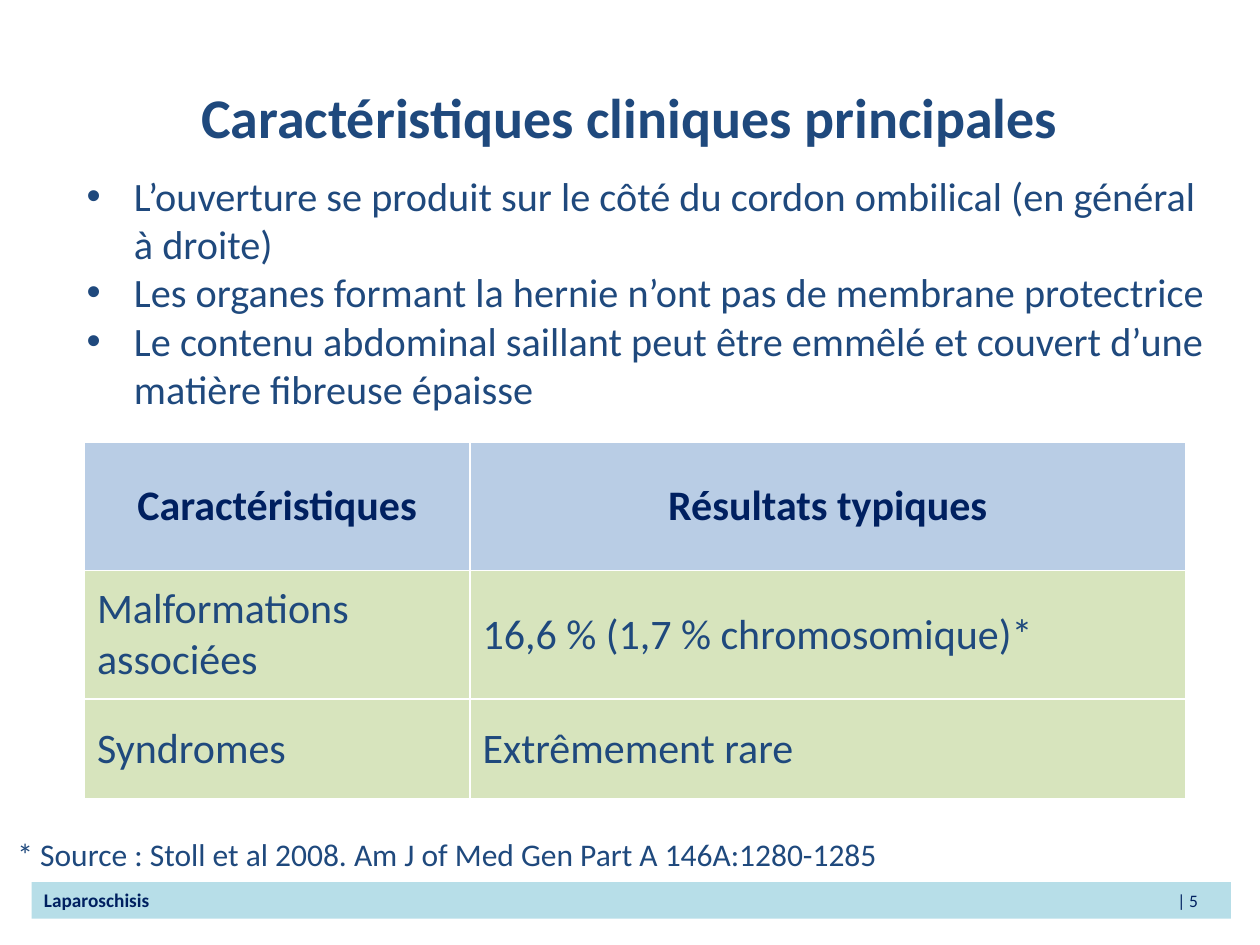
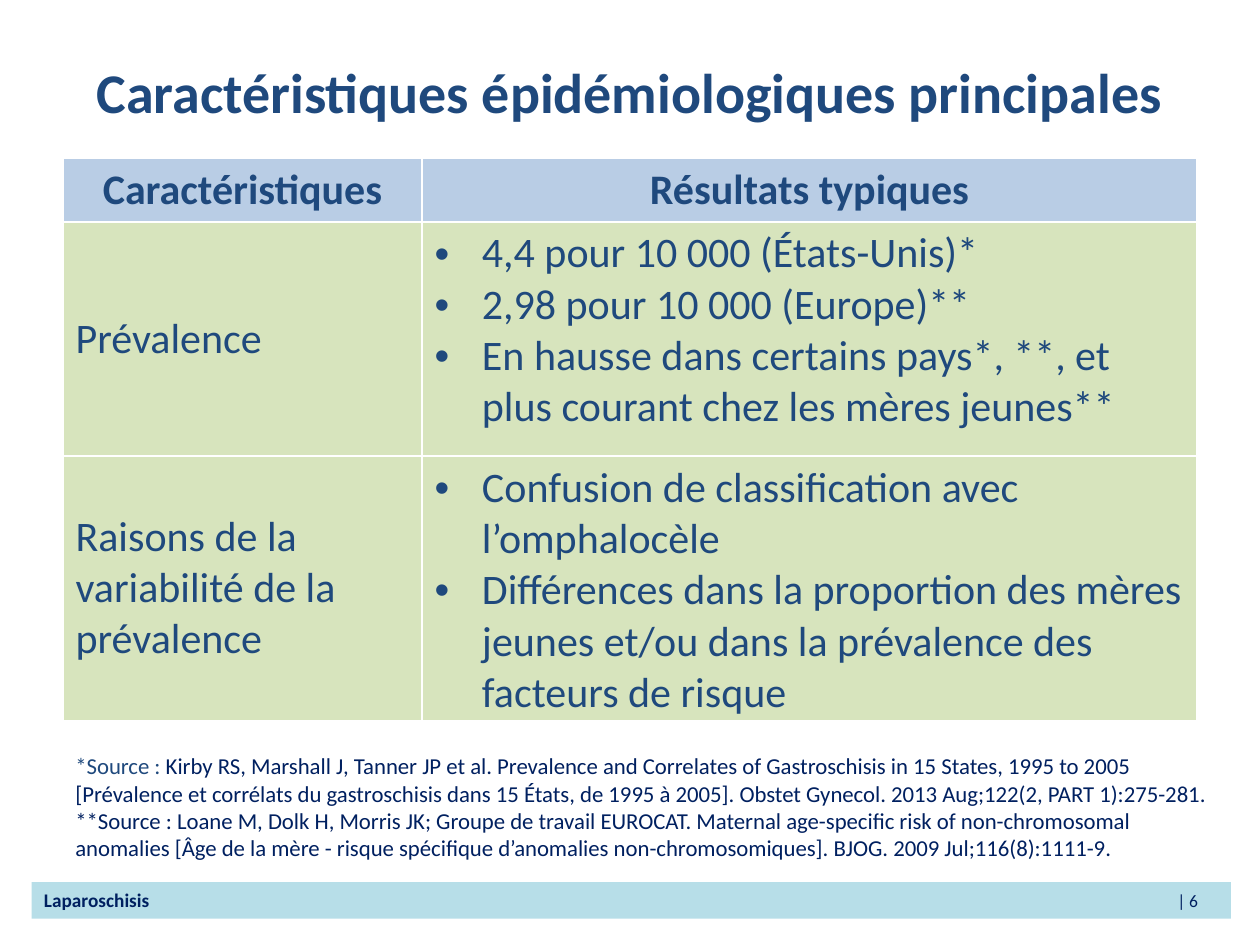
from lxml.etree import SubElement as Sub
from pptx import Presentation
from pptx.dml.color import RGBColor
from pptx.enum.shapes import MSO_SHAPE as Shape
from pptx.enum.text import MSO_ANCHOR as Anchor, PP_ALIGN as Align
from pptx.oxml.ns import qn
from pptx.util import Inches, Pt

BLUE = RGBColor(0x1F, 0x49, 0x7D)
NAVY = RGBColor(0x00, 0x20, 0x60)
AQUA = RGBColor(0xB7, 0xDE, 0xE8)
SKY = RGBColor(0xB9, 0xCD, 0xE5)
LIME = RGBColor(0xD7, 0xE4, 0xBD)
FONT = "Calibri"
COLS, ROWS = 100, 75
HANG = 3.75


class Deck:
    """Slides on a grid of COLS by ROWS; all lengths are in its cells."""

    def __init__(self):
        self.prs = Presentation()
        self.prs.slide_width, self.prs.slide_height = Inches(10), Inches(7.5)
        self.slide = None

    def x(self, cols):
        return round(self.prs.slide_width * cols / COLS)

    def y(self, rows):
        return round(self.prs.slide_height * rows / ROWS)

    def box(self, left, top, width, height):
        return self.x(left), self.y(top), self.x(width), self.y(height)

    def page(self, title, top, num):
        self.slide = self.prs.slides.add_slide(self.prs.slide_layouts[6])
        self.band("Laparoschisis", f"| {num}")
        self.text((5, top, 90, 12.5), [title], 32, bold=True,
                  align=Align.CENTER, anchor=Anchor.MIDDLE)

    def band(self, name, num):
        bar = self.slide.shapes.add_shape(Shape.RECTANGLE, *self.box(2.5, 70, 95.2, 2.9))
        bar.shadow.inherit = False
        bar.fill.solid()
        bar.fill.fore_color.rgb = AQUA
        bar.line.fill.background()
        self.put(bar.text_frame, [[(name + "\t", NAVY), (num, NAVY)]], 11)
        para = bar.text_frame.paragraphs[0]
        para.runs[0].font.bold = True
        para.runs[1].font.size = Pt(10)
        props = para._p.get_or_add_pPr()
        tabs = Sub(props, qn("a:tabLst"))
        Sub(tabs, qn("a:tab"), pos=str(self.x(91.6)), algn="r")
        # the schema wants the tab list ahead of the default run style
        props.insert(0, tabs)

    def text(self, place, paras, size, anchor=Anchor.TOP, **style):
        frame = self.slide.shapes.add_textbox(*self.box(*place)).text_frame
        frame.vertical_anchor = anchor
        self.put(frame, paras, size, **style)

    def put(self, frame, paras, size, color=BLUE, bold=False,
            align=Align.LEFT, dots=False):
        """Fill a frame; a paragraph is a string or a list of (text, colour)."""
        frame.word_wrap = True
        for i, item in enumerate(paras):
            para = frame.add_paragraph() if i else frame.paragraphs[0]
            para.alignment = align
            if dots:
                self.dot(para)
            font = para.font
            font.name, font.size, font.bold = FONT, Pt(size), bold
            font.color.rgb = color
            for words, tint in [(item, None)] if isinstance(item, str) else item:
                run = para.add_run()
                run.text = words
                if tint is not None:
                    run.font.color.rgb = tint

    def dot(self, para):
        props = para._p.get_or_add_pPr()
        props.set("marL", str(self.x(HANG)))
        props.set("indent", str(-self.x(HANG)))
        Sub(props, qn("a:buFont"), typeface="Arial")
        Sub(props, qn("a:buChar"), char="•")

    def table(self, place, cols, rows, cells, head):
        """Draw a table; a cell given as a list becomes a bullet list."""
        grid = self.slide.shapes.add_table(len(rows), len(cols), *self.box(*place)).table
        for col, width in zip(grid.columns, cols):
            col.width = self.x(width)
        for r, (row, height) in enumerate(zip(cells, rows)):
            grid.rows[r].height = self.y(height)
            for c, item in enumerate(row):
                cell = grid.cell(r, c)
                cell.fill.solid()
                cell.fill.fore_color.rgb = LIME if r else SKY
                dots = isinstance(item, list)
                cell.vertical_anchor = Anchor.TOP if dots else Anchor.MIDDLE
                self.put(cell.text_frame, item if dots else [item], 24,
                         color=BLUE if r else head, bold=not r, dots=dots,
                         align=Align.LEFT if r else Align.CENTER)


HEADS = ["Caractéristiques", "Résultats typiques"]


def signs(deck):
    deck.page("Caractéristiques cliniques principales", 3, 5)
    deck.text((5.9, 13.1, 91.4, 20.4), [
        "L’ouverture se produit sur le côté du cordon ombilical (en général à droite)",
        "Les organes formant la hernie n’ont pas de membrane protectrice",
        "Le contenu abdominal saillant peut être emmêlé et couvert d’une "
        "matière fibreuse épaisse",
    ], 23, dots=True)
    deck.table((6.7, 35.1, 87.4, 28.3), [30.6, 56.8], [10.2, 10.2, 7.9], [
        HEADS,
        ["Malformations associées", "16,6 % (1,7 % chromosomique)*"],
        ["Syndromes", "Extrêmement rare"],
    ], NAVY)
    deck.text((0.4, 65.8, 75.6, 4), [
        "* Source : Stoll et al 2008. Am J of Med Gen Part A 146A:1280-1285"], 18)


def rates(deck):
    deck.page("Caractéristiques épidémiologiques principales", 1, 6)
    deck.table((5, 12.6, 90, 44.6), [28.5, 61.5], [4.8, 18.6, 20.6], [
        HEADS,
        ["Prévalence", [
            "4,4 pour 10 000 (États-Unis)*",
            "2,98 pour 10 000 (Europe)**",
            "En hausse dans certains pays*, **, et plus courant chez les mères jeunes**"]],
        ["Raisons de la variabilité de la prévalence", [
            "Confusion de classification avec l’omphalocèle",
            "Différences dans la proportion des mères jeunes et/ou dans la "
            "prévalence des facteurs de risque"]],
    ], BLUE)
    deck.text((5, 59.2, 92.7, 9.8), [
        [("*Source : ", BLUE),
         ("Kirby RS, Marshall J, Tanner JP et al. Prevalence and Correlates of "
          "Gastroschisis in 15 States, 1995 to 2005 [Prévalence et corrélats du "
          "gastroschisis dans 15 États, de 1995 à 2005]. Obstet Gynecol. 2013 "
          "Aug;122(2, PART 1):275-281.", NAVY)],
        "**Source : Loane M, Dolk H, Morris JK; Groupe de travail EUROCAT. Maternal "
        "age-specific risk of non-chromosomal anomalies [Âge de la mère - risque "
        "spécifique d’anomalies non-chromosomiques]. BJOG. 2009 Jul;116(8):1111-9.",
    ], 13, color=NAVY)


def main():
    deck = Deck()
    signs(deck)
    rates(deck)
    deck.prs.save("out.pptx")


if __name__ == "__main__":
    main()
